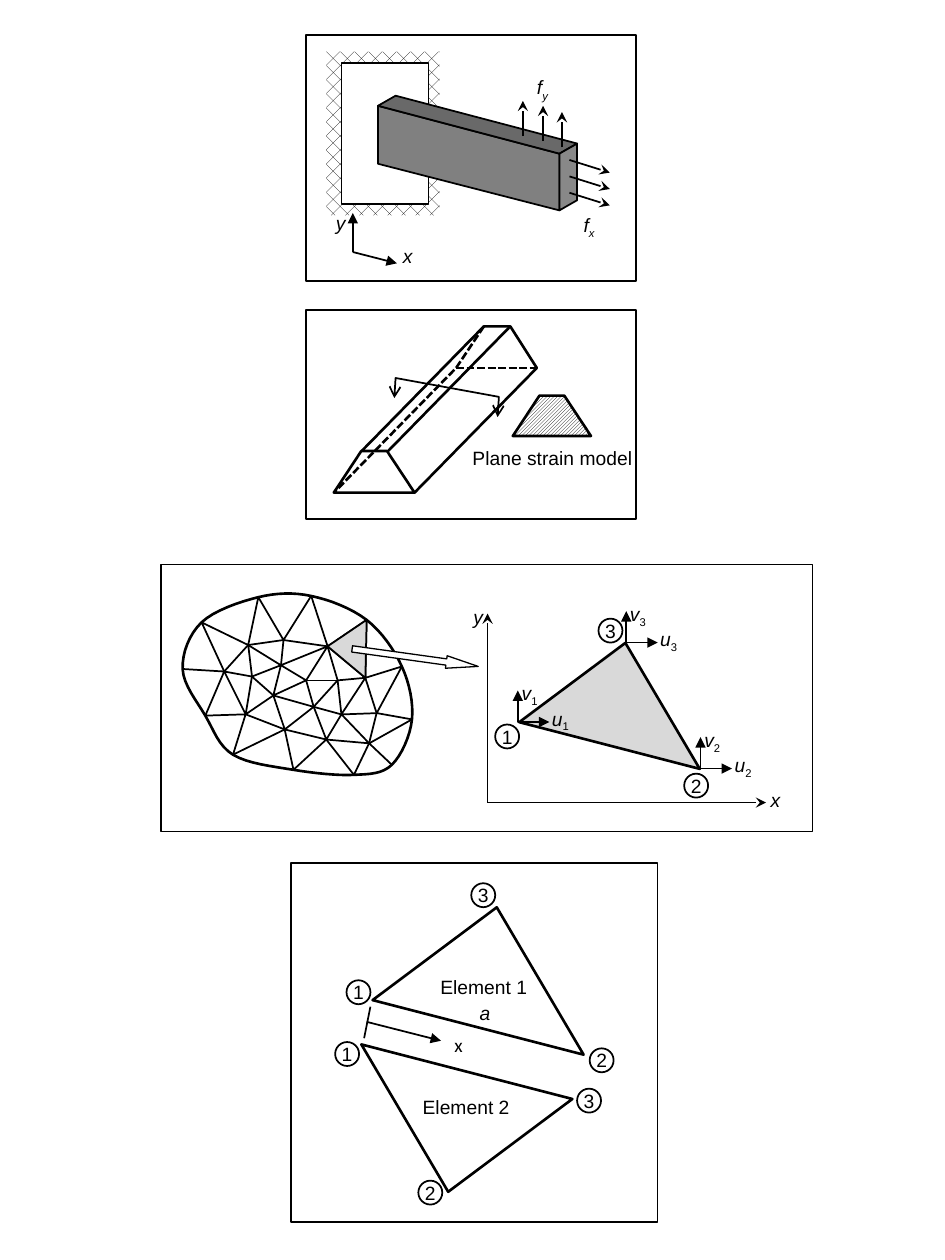
from lxml import etree
from pptx import Presentation
from pptx.dml.color import RGBColor
from pptx.enum.dml import MSO_LINE, MSO_PATTERN
from pptx.enum.shapes import MSO_CONNECTOR, MSO_SHAPE
from pptx.enum.text import MSO_ANCHOR, PP_ALIGN
from pptx.oxml.ns import qn
from pptx.util import Inches, Pt

RECTANGLE, TRIANGLE = MSO_SHAPE.RECTANGLE, MSO_SHAPE.ISOSCELES_TRIANGLE
TRAPEZOID, BLOCK_ARROW = MSO_SHAPE.TRAPEZOID, MSO_SHAPE.RIGHT_ARROW
CROSS_HATCH, DIAGONAL_HATCH = MSO_PATTERN.PERCENT_25, MSO_PATTERN.LIGHT_UPWARD_DIAGONAL
DASHED = MSO_LINE.SQUARE_DOT
CENTER, LEFT = PP_ALIGN.CENTER, PP_ALIGN.LEFT

THEME = {
    "ink": RGBColor.from_string("000000"), "paper": RGBColor.from_string("FFFFFF"),
    "element": RGBColor.from_string("D9D9D9"), "front": RGBColor.from_string("808080"),
    "top": RGBColor.from_string("696969"), "end": RGBColor.from_string("888888"),
    "size": Pt(11), "font": "Arial", "symbol_font": "Calibri",
    "hairline": 0.75, "thin": 1, "thick": 1.5,
}
HAIRLINE, THIN, THICK = THEME["hairline"], THEME["thin"], THEME["thick"]

presentation = Presentation()
presentation.slide_width, presentation.slide_height = Inches(7.5), Inches(10)
slide = presentation.slides.add_slide(presentation.slide_layouts[6])
shapes = slide.shapes


def style(shape, fill=None, pattern=None, line=THIN, dash=None, head=None, tail=None,
          rotation=None, adjustments=()):
    """Set fill, outline, arrowheads and geometry, and remove the theme shadow."""
    if line:
        shape.line.color.rgb = THEME["ink"]
        shape.line.width = Pt(line)
        if dash:
            shape.line.dash_style = dash
        outline = shape.element.spPr.find(qn("a:ln"))
        for tag, kind in (("a:headEnd", head), ("a:tailEnd", tail)):
            if kind:
                etree.SubElement(outline, qn(tag), type=kind)
    else:
        shape.line.fill.background()
    if not hasattr(shape, "fill"):
        etree.SubElement(shape.element.spPr, qn("a:effectLst"))
        return
    shape.shadow.inherit = False
    if rotation:
        shape.rotation = rotation
    for index, value in enumerate(adjustments):
        shape.adjustments[index] = value
    if pattern:
        shape.fill.patterned()
        shape.fill.pattern = pattern
        shape.fill.fore_color.rgb = THEME["ink"]
        shape.fill.back_color.rgb = THEME["paper"]
    elif fill:
        shape.fill.solid()
        shape.fill.fore_color.rgb = THEME[fill]
    else:
        shape.fill.background()


def add_text(text, left, top, width=0.19, height=0.19, subscript="", baseline=-30, italic=False,
             subscript_italic=False, align=CENTER, font="font", wrap=True, circle=False):
    box = [Inches(value) for value in (left, top, width, height)]
    if circle:
        shape = shapes.add_shape(MSO_SHAPE.OVAL, *box)
        style(shape)
    else:
        shape = shapes.add_textbox(*box)
    frame = shape.text_frame
    frame.margin_left = frame.margin_right = frame.margin_top = frame.margin_bottom = 0
    frame.word_wrap = wrap
    frame.vertical_anchor = MSO_ANCHOR.MIDDLE if circle else MSO_ANCHOR.TOP
    paragraph = frame.paragraphs[0]
    paragraph.alignment = align
    for content, slanted in ((text, italic), (subscript, subscript_italic)):
        if content:
            run = paragraph.add_run()
            run.text = content
            run.font.name, run.font.size = THEME[font], THEME["size"]
            run.font.color.rgb, run.font.italic = THEME["ink"], slanted
    if subscript:
        run.font._element.set("baseline", str(baseline * 1000))


# Beam: near face corners, and the far face shifted back
a, b, c, d = [(3, 0.84), (4.44, 1.22), (4.44, 1.67), (3, 1.3)]
far_a, far_b, far_c = [(x + 0.14, y - 0.08) for x, y in (a, b, c)]

# Prism: front corners clockwise from bottom left, and the rear section shifted back
front = [(2.65, 3.91), (2.87, 3.58), (3.08, 3.58), (3.29, 3.91)]
rear = [(x + 0.97, y - 0.99) for x, y in front]

# Mesh nodes: A to L run round the rim, the others lie inside
rim = [(1.45, 5.31), (1.6, 4.94), (2.05, 4.74), (2.47, 4.73), (2.91, 4.92), (3.19, 5.29),
       (3.27, 5.71), (3.11, 6.07), (2.81, 6.15), (2.33, 6.11), (1.85, 5.99), (1.63, 5.68)]
inside = [(1.78, 5.33), (1.97, 5.12), (2.25, 5.08), (2.6, 5.13), (2.9, 5.38), (2.99, 5.66),
          (2.93, 5.9), (2.59, 5.87), (2.26, 5.79), (1.95, 5.67), (2, 5.37), (2.23, 5.28),
          (2.43, 5.4), (2.68, 5.4), (2.71, 5.67), (2.49, 5.61), (2.17, 5.52)]
mesh = dict(zip("ABCDEFGHIJKLMNOPQRSTUVWXYZabc", rim + inside))
mesh_paths = ["AMBNCODPEQFRGSH", "ISRQPONMLVKUJTI", "MVUTSaTbUcVWM", "RabcWNXO",
              "WXcYbZaQZPYXP", "YZ"]

# A Catmull-Rom curve rounds the rim
STEPS = 8
boundary = []
for index in range(len(rim)):
    corners = [rim[(index + shift) % len(rim)] for shift in (-1, 0, 1, 2)]
    for step in range(STEPS):
        t = step / STEPS
        boundary.append(tuple(
            q + t * (r - p + t * (2 * p - 5 * q + 4 * r - s + t * (3 * (q - r) + s - p))) / 2
            for p, q, r, s in zip(*corners)))
boundary.append(boundary[0])

nodes = [(4.11, 5.73), (5.56, 6.1), (4.97, 5.1)]
stealth, arrow = {"tail": "stealth"}, {"tail": "triangle"}
both_ends = {"head": "triangle", "tail": "triangle"}
tilted = {"line": THICK, "rotation": 14.5, "adjustments": [0.445]}
trapezoid = {"line": THICK, "adjustments": [0.66]}

# Each part is a preset with its box, or a path (no preset) with its points, and a format
parts = [
    # Cantilever beam
    (RECTANGLE, (2.59, 0.41, 0.9, 1.3), {"pattern": CROSS_HATCH, "line": None}),
    (RECTANGLE, (2.71, 0.5, 0.69, 1.12), {"fill": "paper", "line": HAIRLINE}),
    (None, [a, b, c, d, a], {"fill": "front"}),
    (None, [a, far_a, far_b, b, a], {"fill": "top"}),
    (None, [b, far_b, far_c, c, b], {"fill": "end"}),
    *[(None, [(4.52, y), (4.84, y + 0.1)], stealth) for y in (1.27, 1.4, 1.53)],
    *[(None, [(x, y), (x, y - 0.28)], stealth)
      for x, y in ((4.15, 1.08), (4.31, 1.12), (4.46, 1.17))],
    *[(None, [(2.8, 2), tip], arrow) for tip in ((3.15, 2.09), (2.8, 1.69))],
    # Plane strain prism
    (TRAPEZOID, (2.65, 3.58, 0.64, 0.33), trapezoid | {"fill": "paper"}),
    (TRAPEZOID, (4.07, 3.14, 0.62, 0.32), trapezoid | {"pattern": DIAGONAL_HATCH}),
    (None, [(3.13, 3.16), (3.14, 3), (3.96, 3.15), (3.95, 3.31)],
     {"head": "arrow", "tail": "arrow"}),
    (None, [front[1], *rear[1:], front[3]], {"line": THICK}),
    (None, [rear[1], rear[0], front[0]], {"line": THICK, "dash": DASHED}),
    (None, [rear[0], rear[3]], {"line": THICK, "dash": DASHED}),
    (None, [front[2], rear[2]], {"line": THICK}),
    # Mesh and its highlighted element
    (TRIANGLE, (4.2, 5.11, 1.48, 0.82), tilted | {"fill": "element"}),
    *[(None, [(3.87, 6.37), tip], stealth) for tip in ((6.08, 6.37), (3.87, 4.87))],
    (None, boundary, {"fill": "paper", "line": THICK}),
    *[(None, [mesh[name] for name in names], {}) for names in mesh_paths],
    *[(None, [(x, y - 0.25), (x, y), (x + 0.25, y)], both_ends) for x, y in nodes],
    (None, [mesh[name] for name in "EPQE"], {"fill": "element"}),
    (BLOCK_ARROW, (2.79, 5.17, 1.01, 0.1),
     {"fill": "paper", "line": HAIRLINE, "rotation": 7.9, "adjustments": [0.5, 2.551]}),
    # Two adjacent elements
    (TRIANGLE, (3.05, 7.21, 1.73, 0.96), tilted),
    (TRIANGLE, (2.72, 8.49, 1.73, 0.96), tilted | {"rotation": 194.5}),
    (None, [(2.94, 7.99), (2.89, 8.24)], {}),
    (None, [(2.91, 8.11), (3.5, 8.26)], arrow),
    # Panel frames
    *[(RECTANGLE, box, {}) for box in (
        (2.43, 0.28, 2.62, 1.95), (2.43, 2.46, 2.62, 1.66),
        (1.28, 4.48, 5.17, 2.12), (2.31, 6.85, 2.91, 2.85))],
]
for preset, geometry, look in parts:
    if preset is not None:
        shape = shapes.add_shape(preset, *[Inches(value) for value in geometry])
    else:
        points = [(Inches(x), Inches(y)) for x, y in geometry]
        if len(points) == 2:
            shape = shapes.add_connector(MSO_CONNECTOR.STRAIGHT, *points[0], *points[1])
        else:
            builder = shapes.build_freeform(*points[0])
            builder.add_line_segments(points[1:], close=points[0] == points[-1])
            shape = builder.convert_to_shape()
    style(shape, **look)

for axis, left, top in [("x", 3.14, 1.94), ("y", 2.61, 1.68), ("x", 6.06, 6.26), ("y", 3.7, 4.8)]:
    add_text(axis, left, top, italic=True)
for direction, left, top in [("x", 4.58, 1.69), ("y", 4.21, 0.6)]:
    add_text("f", left, top, subscript=direction, italic=True, subscript_italic=True)
for number, (x, y) in enumerate(nodes, 1):
    for symbol, left, top in [("u", x + 0.27, y - 0.12), ("v", x + 0.03, y - 0.32)]:
        add_text(symbol, left, top, 0.14, subscript=str(number), baseline=-25,
                 italic=True, align=LEFT, wrap=False)

for centers in [
    [(3.93, 5.75), (5.43, 6.14), (4.75, 4.91)],
    [(2.75, 7.78), (4.68, 8.32), (3.74, 7.01)],
    [(2.66, 8.27), (3.32, 9.37), (4.58, 8.64)],
]:
    for number, (left, top) in enumerate(centers, 1):
        add_text(str(number), left, top, circle=True, wrap=False)

add_text("Plane strain model", 3.75, 3.54, 1.3, align=LEFT)
add_text("Element 1", 3.46, 7.74, 0.76)
add_text("Element 2", 3.32, 8.69, 0.76)
add_text("x", 3.53, 8.2, 0.22, font="symbol_font")
add_text("a", 3.74, 7.95, 0.22, italic=True)

presentation.save("out.pptx")
